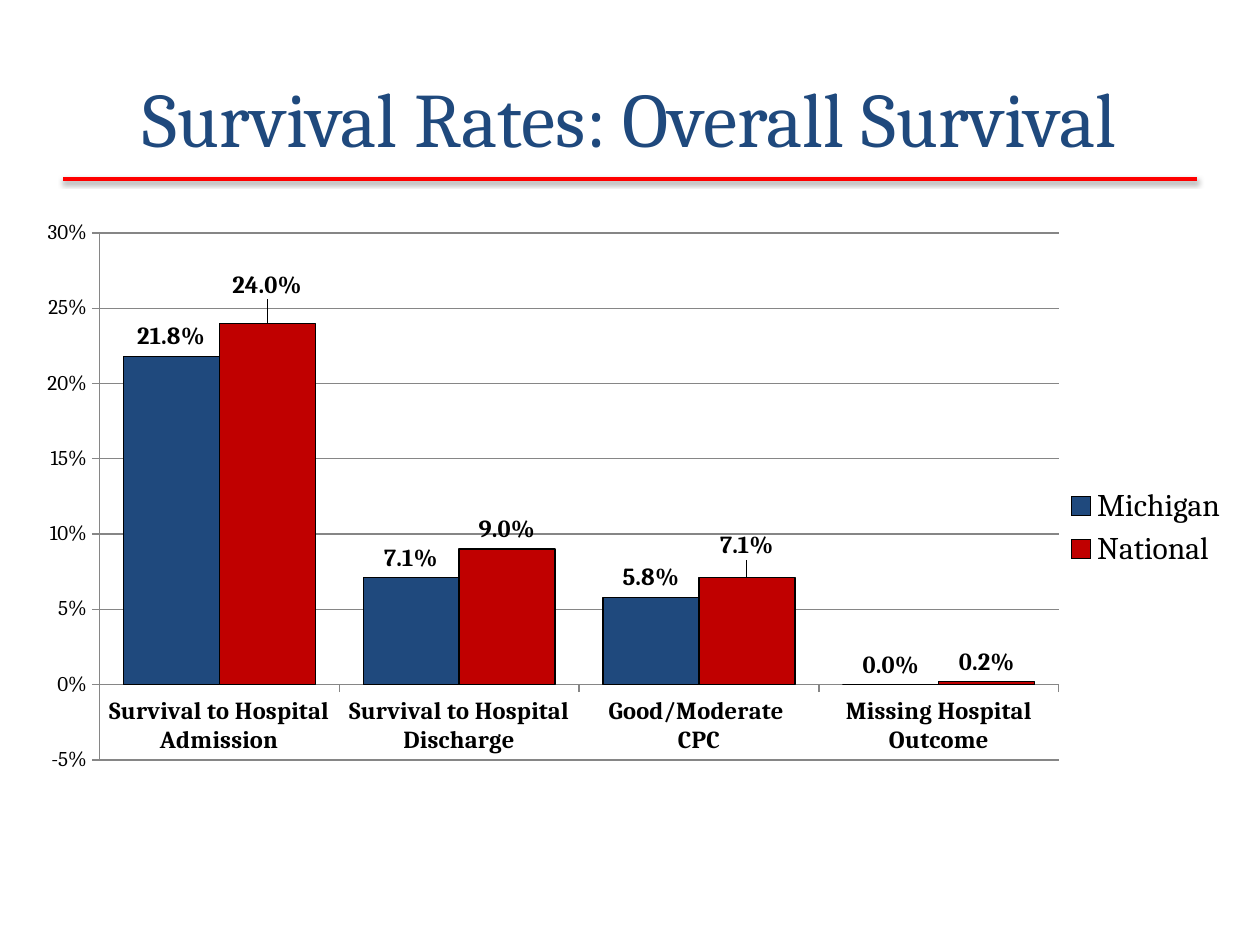
from dataclasses import dataclass, field

from lxml import etree
from pptx import Presentation
from pptx.chart.data import CategoryChartData
from pptx.dml.color import RGBColor
from pptx.enum.chart import (XL_CHART_TYPE, XL_LABEL_POSITION,
                             XL_LEGEND_POSITION, XL_TICK_MARK)
from pptx.enum.shapes import MSO_CONNECTOR
from pptx.enum.text import MSO_ANCHOR, PP_ALIGN
from pptx.oxml import parse_xml
from pptx.oxml.ns import nsdecls, qn
from pptx.util import Inches, Pt

NAVY = RGBColor(0x1F, 0x49, 0x7D)
CRIMSON = RGBColor(0xC0, 0x00, 0x00)
RED = RGBColor(0xFF, 0x00, 0x00)
BLACK = RGBColor(0x00, 0x00, 0x00)
GRAY = RGBColor(0x86, 0x86, 0x86)
FONT = "Cambria"
LABEL_FORMAT = "0.0%"

CLUSTERED = XL_CHART_TYPE.COLUMN_CLUSTERED
OUTSIDE_END = XL_LABEL_POSITION.OUTSIDE_END
TICK_OUT = XL_TICK_MARK.OUTSIDE
TICK_NONE = XL_TICK_MARK.NONE


@dataclass
class RateSeries:
    name: str
    values: tuple[float, ...]
    color: RGBColor
    # Point index -> label offset, as fractions of the chart size
    label_shifts: dict[int, tuple[float, float]] = field(default_factory=dict)


CATEGORIES = ("Survival to Hospital Admission", "Survival to Hospital Discharge",
              "Good/Moderate \nCPC", "Missing Hospital Outcome")
SERIES = (
    RateSeries("Michigan", (0.218, 0.071, 0.058, 0), NAVY),
    RateSeries("National", (0.24, 0.09, 0.071, 0.002), CRIMSON,
               {0: (0, -0.03), 2: (0, -0.02)}),
)


def add_title(slide, text: str) -> None:
    tf = slide.shapes.add_textbox(Inches(0.5), Inches(0.3),
                                  Inches(9), Inches(1.25)).text_frame
    tf.word_wrap = True
    tf.vertical_anchor = MSO_ANCHOR.MIDDLE
    tf.text = text
    p = tf.paragraphs[0]
    p.alignment = PP_ALIGN.CENTER
    font = p.runs[0].font
    font.name, font.size, font.color.rgb = FONT, Pt(44), NAVY


def add_title_rule(slide) -> None:
    """Draw the red line under the title, with its soft shadow."""
    y = Inches(1.42)
    line = slide.shapes.add_connector(MSO_CONNECTOR.STRAIGHT,
                                      Inches(0.5), y, Inches(9.5), y)
    line.line.color.rgb = RED
    line.line.width = Pt(2)
    line._element.spPr.append(parse_xml(
        f'<a:effectLst {nsdecls("a")}>'
        f'<a:outerShdw blurRad="{Pt(3.1)}" dist="{Pt(1.6)}" dir="5400000" rotWithShape="0">'
        '<a:srgbClr val="000000"><a:alpha val="38000"/></a:srgbClr>'
        '</a:outerShdw></a:effectLst>'))


def manual_layout(**settings) -> etree._Element:
    layout = etree.Element(qn("c:layout"))
    manual = etree.SubElement(layout, qn("c:manualLayout"))
    for tag, value in settings.items():
        etree.SubElement(manual, qn(f"c:{tag}")).set("val", str(value))
    return layout


def style_labels(labels) -> None:
    labels.font.name = FONT
    labels.font.size = Pt(14)
    labels.font.bold = True
    labels.font.color.rgb = BLACK
    labels.position = OUTSIDE_END


def style_series(series, rate: RateSeries) -> None:
    series.format.fill.solid()
    series.format.fill.fore_color.rgb = rate.color
    series.format.line.color.rgb = BLACK
    series.format.line.width = Pt(0.75)

    labels = series.data_labels
    labels.show_value = True
    labels.number_format = LABEL_FORMAT
    labels.number_format_is_linked = False
    style_labels(labels)

    for index, (dx, dy) in rate.label_shifts.items():
        style_labels(series.points[index].data_label)
        idx = labels._element.xpath(f"c:dLbl/c:idx[@val='{index}']")[0]
        num_fmt = etree.Element(qn("c:numFmt"), formatCode=LABEL_FORMAT,
                                sourceLinked="0")
        idx.addnext(num_fmt)
        idx.addnext(manual_layout(x=dx, y=dy))


def style_axis(axis, size: int, bold: bool) -> None:
    axis.major_tick_mark = TICK_OUT
    axis.minor_tick_mark = TICK_NONE
    axis.format.line.color.rgb = GRAY
    axis.format.line.width = Pt(0.75)
    font = axis.tick_labels.font
    font.name, font.size, font.bold, font.color.rgb = FONT, Pt(size), bold, BLACK


def add_survival_chart(slide) -> None:
    data = CategoryChartData(number_format="0.0%")
    data.categories = CATEGORIES
    for rate in SERIES:
        data.add_series(rate.name, rate.values)
    chart = slide.shapes.add_chart(CLUSTERED, Inches(0.21), Inches(1.7),
                                   Inches(9.64), Inches(4.98), data).chart
    chart.has_title = False
    chart.font.name, chart.font.size, chart.font.color.rgb = FONT, Pt(18), BLACK

    chart.has_legend = True
    chart.legend.position = XL_LEGEND_POSITION.RIGHT
    chart.legend.include_in_layout = False

    style_axis(chart.category_axis, 14, True)
    value_axis = chart.value_axis
    style_axis(value_axis, 12, False)
    value_axis.minimum_scale, value_axis.maximum_scale = -0.05, 0.3
    value_axis.major_unit = 0.05
    value_axis.tick_labels.number_format = "0%"
    value_axis.tick_labels.number_format_is_linked = False
    value_axis.has_major_gridlines = True
    value_axis.major_gridlines.format.line.color.rgb = GRAY

    plot = chart.plots[0]
    plot.gap_width, plot.overlap = 50, 0
    plot.vary_by_categories = False
    for series, rate in zip(plot.series, SERIES):
        style_series(series, rate)

    plot_area = chart._chartSpace.chart.plotArea
    for old in plot_area.findall(qn("c:layout")):
        plot_area.remove(old)
    plot_area.insert(0, manual_layout(layoutTarget="inner", xMode="edge", yMode="edge",
                                      x=0.06, y=0.03, w=0.79, h=0.84))


def main() -> None:
    prs = Presentation()
    prs.slide_width, prs.slide_height = Inches(10), Inches(7.5)
    slide = prs.slides.add_slide(prs.slide_layouts[6])
    add_title_rule(slide)
    add_title(slide, "Survival Rates: Overall Survival")
    add_survival_chart(slide)
    prs.save("out.pptx")


if __name__ == "__main__":
    main()
